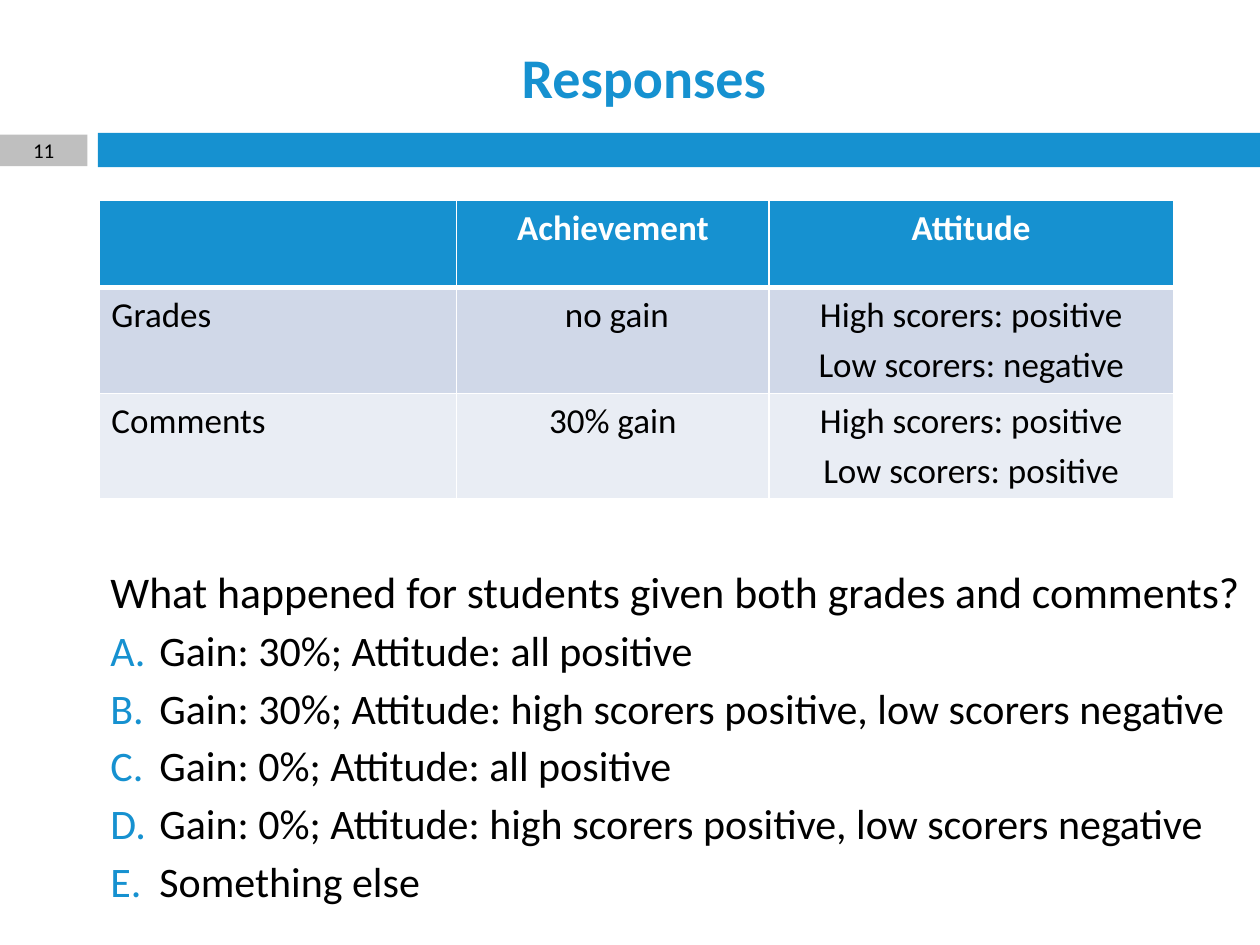
"""Build the Responses slide with a results table and a multiple-choice question."""
from lxml import etree
from pptx import Presentation
from pptx.dml.color import RGBColor
from pptx.enum.shapes import MSO_SHAPE
from pptx.enum.text import MSO_ANCHOR, MSO_AUTO_SIZE, PP_ALIGN
from pptx.oxml.ns import qn
from pptx.util import Pt

RECTANGLE = MSO_SHAPE.RECTANGLE
LEFT, CENTER = PP_ALIGN.LEFT, PP_ALIGN.CENTER
TOP, MIDDLE = MSO_ANCHOR.TOP, MSO_ANCHOR.MIDDLE
NO_AUTOFIT = MSO_AUTO_SIZE.NONE
FONT = "Calibri"
TITLE_ONLY = 5
COLORS = {
    "accent": "1691D0",
    "gray": "BFBFBF",
    "text": "000000",
    "white": "FFFFFF",
    "band_dark": "D0D8E8",
    "band_light": "E9EDF4",
}
MARGIN = 56
SPACE_BEFORE = 4.2
LETTER_INDENT = 28

HEADER = ["", "Achievement", "Attitude"]
ROWS = [
    ["Grades", " no gain", "High scorers: positive\nLow scorers: negative"],
    ["Comments", "30% gain", "High scorers: positive\nLow scorers: positive"],
]
COLUMN_WIDTHS = [204.5, 178.5, 231]
ROW_HEIGHTS = [50, 60, 60]
QUESTION = "What happened for students given both grades and comments?"
ANSWERS = [
    "Gain: 30%; Attitude: all positive",
    "Gain: 30%; Attitude: high scorers positive, low scorers negative",
    "Gain: 0%; Attitude: all positive",
    "Gain: 0%; Attitude: high scorers positive, low scorers negative",
    "Something else",
]


def color(name):
    """Return the named colour."""
    return RGBColor.from_string(COLORS[name])


def write(paragraph, text, size=20, fill="text", bold=False, align=LEFT, before=0):
    """Write formatted text into a paragraph."""
    paragraph.alignment = align
    paragraph.space_before = Pt(before)
    run = paragraph.add_run()
    run.text = text
    font = run.font
    font.name, font.size, font.bold = FONT, Pt(size), bold
    font.color.rgb = color(fill)


def add_letter(paragraph):
    """Number a paragraph with an accent-coloured capital letter."""
    properties = paragraph._p.get_or_add_pPr()
    properties.set("marL", str(Pt(LETTER_INDENT)))
    properties.set("indent", str(-Pt(LETTER_INDENT)))
    bullet_color = etree.SubElement(properties, qn("a:buClr"))
    etree.SubElement(bullet_color, qn("a:srgbClr"), val=COLORS["accent"])
    etree.SubElement(properties, qn("a:buFont"), typeface=FONT)
    etree.SubElement(properties, qn("a:buAutoNum"), type="alphaUcPeriod")


def add_borders(cell, bottom):
    """Draw white borders around a cell."""
    properties = cell._tc.get_or_add_tcPr()
    for side, width in (("L", 1), ("R", 1), ("T", 1), ("B", bottom)):
        line = etree.SubElement(properties, qn(f"a:ln{side}"), w=str(Pt(width)))
        fill = etree.SubElement(line, qn("a:solidFill"))
        etree.SubElement(fill, qn("a:srgbClr"), val=COLORS["white"])


class SlideBuilder:
    """Add styled elements to one slide, with lengths in points."""

    def __init__(self, slide):
        self.slide = slide

    def title(self, text, left, top, width, height):
        """Place and fill the title placeholder."""
        title = self.slide.shapes.title
        title.left, title.top = Pt(left), Pt(top)
        title.width, title.height = Pt(width), Pt(height)
        title.text_frame.vertical_anchor = MIDDLE
        write(title.text_frame.paragraphs[0], text, 32, "accent", True, CENTER)

    def bar(self, left, top, width, height, fill, text=""):
        """Add a plain rectangle with an optional label."""
        shape = self.slide.shapes.add_shape(
            RECTANGLE, Pt(left), Pt(top), Pt(width), Pt(height))
        shape.shadow.inherit = False
        shape.fill.solid()
        shape.fill.fore_color.rgb = color(fill)
        shape.line.fill.background()
        if text:
            frame = shape.text_frame
            frame.margin_top = frame.margin_bottom = 0
            frame.vertical_anchor = MIDDLE
            write(frame.paragraphs[0], text, 12, align=CENTER)

    def table(self, left, top, rows, widths, heights):
        """Add a table with an accent header and banded rows."""
        frame = self.slide.shapes.add_table(
            len(rows), len(widths), Pt(left), Pt(top), Pt(sum(widths)), Pt(sum(heights)))
        table = frame.table
        for column, width in zip(table.columns, widths):
            column.width = Pt(width)
        for row, height in zip(table.rows, heights):
            row.height = Pt(height)
        fills = ["accent", "band_dark", "band_light"]
        for row_index, row in enumerate(rows):
            for column_index, text in enumerate(row):
                cell = table.cell(row_index, column_index)
                self.cell(cell, text, fills[row_index], row_index == 0,
                          CENTER if column_index else LEFT)

    def cell(self, cell, text, fill, header, align):
        """Style and fill one table cell."""
        add_borders(cell, 3 if header else 1)
        cell.fill.solid()
        cell.fill.fore_color.rgb = color(fill)
        cell.vertical_anchor = TOP
        frame = cell.text_frame
        for index, line in enumerate(text.split("\n") if text else []):
            paragraph = frame.add_paragraph() if index else frame.paragraphs[0]
            write(paragraph, line, fill="white" if header else "text", bold=header,
                  align=align, before=SPACE_BEFORE if index else 0)

    def question(self, left, top, width, height, question, answers):
        """Add a question followed by lettered answers."""
        box = self.slide.shapes.add_textbox(Pt(left), Pt(top), Pt(width), Pt(height))
        frame = box.text_frame
        frame.word_wrap = True
        frame.auto_size = NO_AUTOFIT
        write(frame.paragraphs[0], question, 25)
        for answer in answers:
            paragraph = frame.add_paragraph()
            add_letter(paragraph)
            write(paragraph, answer, 24, before=SPACE_BEFORE)


def main():
    """Build and save the presentation."""
    presentation = Presentation()
    presentation.slide_width, presentation.slide_height = Pt(720), Pt(540)
    layout = presentation.slide_layouts[TITLE_ONLY]
    builder = SlideBuilder(presentation.slides.add_slide(layout))
    builder.bar(MARGIN, 76, 720 - MARGIN, 19.5, "accent")
    builder.bar(0, 77, 50, 18, "gray", "11")
    builder.title("Responses", MARGIN, 19, 624, 49)
    builder.table(MARGIN + 0.5, 114.5, [HEADER, *ROWS], COLUMN_WIDTHS, ROW_HEIGHTS)
    builder.question(MARGIN, 319, 672, 221, QUESTION, ANSWERS)
    presentation.save("out.pptx")


if __name__ == "__main__":
    main()
